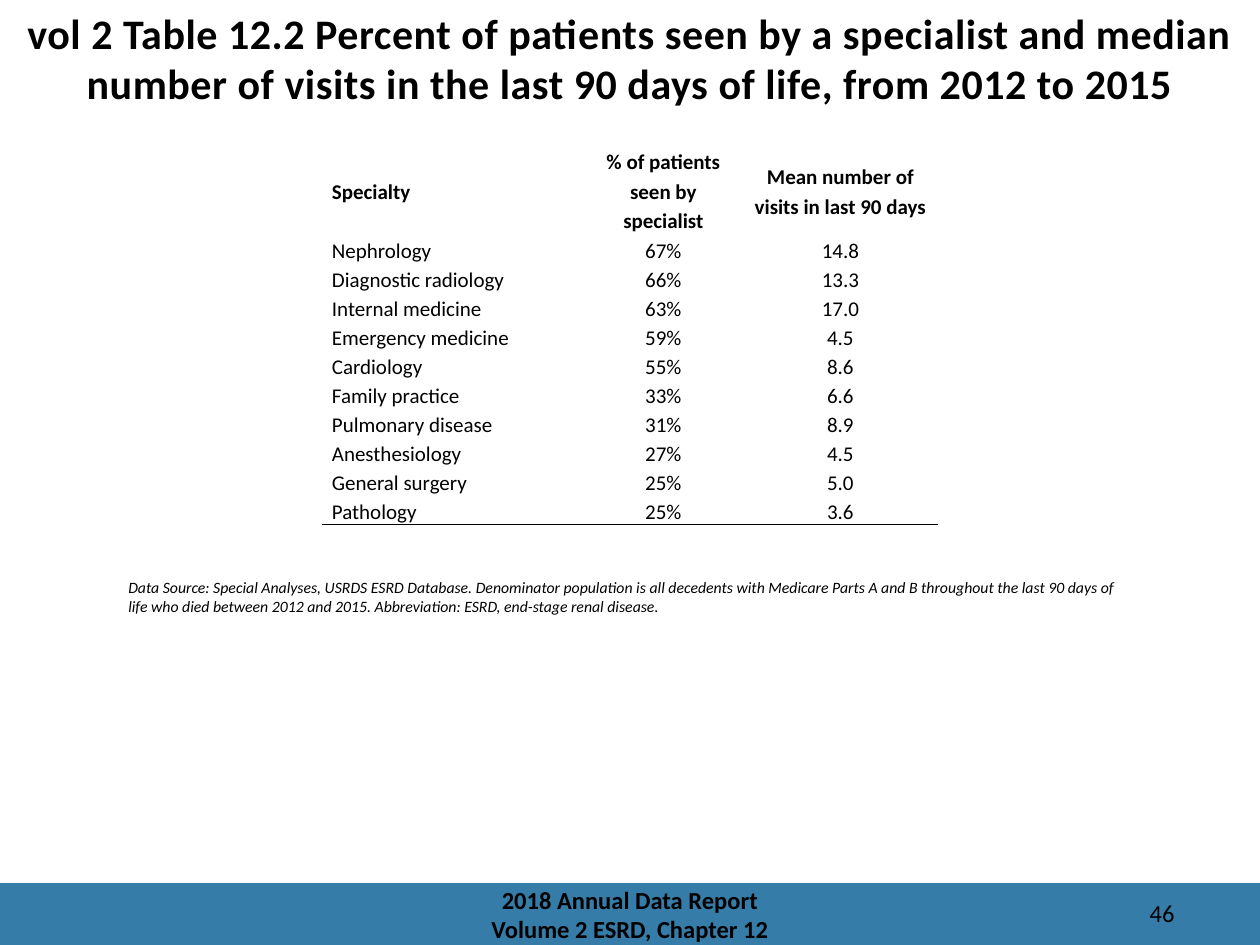
from dataclasses import dataclass

from lxml.etree import SubElement
from pptx import Presentation
from pptx.dml.color import RGBColor as Color
from pptx.enum.shapes import MSO_SHAPE as Shape
from pptx.enum.text import MSO_ANCHOR as Anchor, PP_ALIGN as Align
from pptx.oxml.ns import qn
from pptx.util import Inches, Pt

# Content
TITLE = ("vol 2 Table 12.2 Percent of patients seen by a specialist and median "
         "number of visits in the last 90 days of life, from 2012 to 2015")
HEAD = ("Specialty", "% of patients seen by specialist",
        "Mean number of visits in last 90 days")
ROWS = [
    ("Nephrology", "67%", "14.8"),
    ("Diagnostic radiology", "66%", "13.3"),
    ("Internal medicine", "63%", "17.0"),
    ("Emergency medicine", "59%", "4.5"),
    ("Cardiology", "55%", "8.6"),
    ("Family practice", "33%", "6.6"),
    ("Pulmonary disease", "31%", "8.9"),
    ("Anesthesiology", "27%", "4.5"),
    ("General surgery", "25%", "5.0"),
    ("Pathology", "25%", "3.6"),
]
NOTE = ("Data Source: Special Analyses, USRDS ESRD Database. Denominator "
        "population is all decedents with Medicare Parts A and B throughout "
        "the last 90 days of life who died between 2012 and 2015. "
        "Abbreviation: ESRD, end-stage renal disease.")
FOOTER = "2018 Annual Data Report\nVolume 2 ESRD, Chapter 12"
PAGE = "46"


@dataclass(frozen=True)
class Theme:
    font: str = "Calibri"
    ink: str = "000000"
    band: str = "367CA8"
    title: int = 24
    foot: int = 14
    cell: int = 12
    note: int = 9


THEME = Theme()
WIDE, HIGH = 10, 7.5
BAND = 0.49
COLS = (2.06, 1.28, 1.53)
HEAD_ROW, BODY_ROW = 0.7, 0.23


def style(frame, size, align=Align.LEFT, bold=False, italic=False):
    for para in frame.paragraphs:
        para.alignment = align
        font = para.font
        font.name, font.size = THEME.font, Pt(size)
        font.bold, font.italic = bold, italic
        font.color.rgb = Color.from_string(THEME.ink)


def add_text(slide, text, box, size, anchor=Anchor.TOP, **look):
    frame = slide.shapes.add_textbox(*map(Inches, box)).text_frame
    frame.word_wrap = True
    frame.vertical_anchor = anchor
    frame.text = text
    style(frame, size, **look)


def rule_below(cell):
    line = SubElement(cell._tc.get_or_add_tcPr(), qn("a:lnB"), w=str(Pt(1)))
    fill = SubElement(line, qn("a:solidFill"))
    SubElement(fill, qn("a:srgbClr"), val=THEME.ink)


def add_grid(slide):
    data = [HEAD, *ROWS]
    wide = sum(COLS)
    high = HEAD_ROW + BODY_ROW * len(ROWS)
    box = ((WIDE - wide) / 2, 1.16, wide, high)
    grid = slide.shapes.add_table(len(data), len(COLS), *map(Inches, box)).table
    grid.first_row = grid.horz_banding = False
    for col, width in zip(grid.columns, COLS):
        col.width = Inches(width)
    for i, texts in enumerate(data):
        grid.rows[i].height = Inches(BODY_ROW if i else HEAD_ROW)
        for j, text in enumerate(texts):
            cell = grid.cell(i, j)
            cell.margin_left = cell.margin_right = Inches(0.07)
            cell.margin_top = cell.margin_bottom = 0
            cell.vertical_anchor = Anchor.MIDDLE
            cell.text = text
            style(cell.text_frame, THEME.cell,
                  Align.CENTER if j else Align.LEFT, bold=i == 0)
            cell.text_frame.paragraphs[0].line_spacing = 1.15
            if i in (0, len(ROWS)):
                rule_below(cell)
            cell.fill.background()


def main():
    deck = Presentation()
    deck.slide_width, deck.slide_height = Inches(WIDE), Inches(HIGH)
    slide = deck.slides.add_slide(deck.slide_layouts[5])

    # Footer band
    top = HIGH - BAND
    band = slide.shapes.add_shape(
        Shape.RECTANGLE, *map(Inches, (0, top, WIDE, BAND)))
    band.shadow.inherit = False
    band.fill.solid()
    band.fill.fore_color.rgb = Color.from_string(THEME.band)
    band.line.fill.background()
    add_text(slide, PAGE, (8.42, 7.08, 1, 0.3), THEME.foot, align=Align.RIGHT)
    add_text(slide, FOOTER, (3.31, top, 3.38, BAND), THEME.foot,
             Anchor.MIDDLE, align=Align.CENTER, bold=True)

    # Title
    title = slide.shapes.title
    title.left, title.top, title.width, title.height = map(
        Inches, (0, 0, WIDE, 0.92))
    frame = title.text_frame
    frame.text = TITLE
    frame.vertical_anchor = Anchor.MIDDLE
    style(frame, THEME.title, Align.CENTER, bold=True)
    frame.paragraphs[0].runs[0].font._element.set("spc", "30")

    # Table and source note
    add_grid(slide)
    add_text(slide, NOTE, (0.92, 4.54, 8.17, 0.4), THEME.note, italic=True)
    deck.save("out.pptx")


if __name__ == "__main__":
    main()
